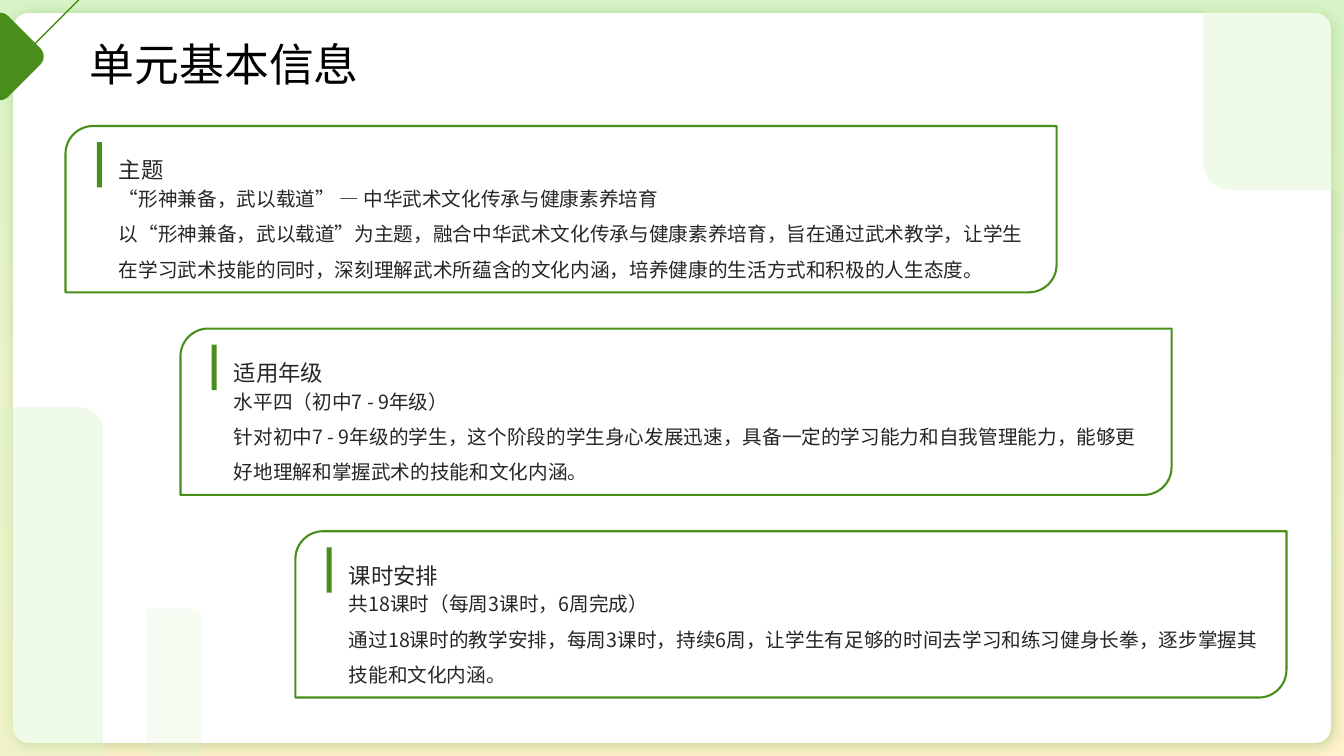
from lxml import etree
from pptx import Presentation
from pptx.dml.color import RGBColor
from pptx.enum.shapes import MSO_SHAPE as SHAPE
from pptx.enum.text import MSO_ANCHOR as ANCHOR, MSO_AUTO_SIZE as AUTO, PP_ALIGN as ALIGN
from pptx.oxml.ns import qn
from pptx.util import Inches, Pt

COLORS = {"green": "498E1B", "mint": "D8F4C6", "cream": "FFF2CC",
          "white": "FFFFFF", "text": "262626", "title": "000000"}
FONT = "Noto Sans CJK SC"
SLIDE_W, SLIDE_H = 13.33, 7.5

TITLE = "单元基本信息"
SECTIONS = [
    ("主题",
     "“形神兼备，武以载道” — 中华武术文化传承与健康素养培育\n"
     "以“形神兼备，武以载道”为主题，融合中华武术文化传承与健康素养培育，旨在通过武术教学，"
     "让学生在学习武术技能的同时，深刻理解武术所蕴含的文化内涵，培养健康的生活方式和积极的人生态度。"),
    ("适用年级",
     "水平四（初中7 - 9年级）\n"
     "针对初中7 - 9年级的学生，这个阶段的学生身心发展迅速，具备一定的学习能力和自我管理能力，"
     "能够更好地理解和掌握武术的技能和文化内涵。"),
    ("课时安排",
     "共18课时（每周3课时，6周完成）\n"
     "通过18课时的教学安排，每周3课时，持续6周，让学生有足够的时间去学习和练习健身长拳，"
     "逐步掌握其技能和文化内涵。"),
]


def rgb(name):
    return RGBColor.from_string(COLORS[name])


def inches(*box):
    return [Inches(v) for v in box]


def add_block(slide, kind, box, fill, line=None, rotation=0, opacity=None):
    sp = slide.shapes.add_shape(kind, *inches(*box))
    sp.shadow.inherit = False
    sp.rotation = rotation
    sp.fill.solid()
    sp.fill.fore_color.rgb = rgb(fill)
    if opacity is not None:
        color = sp.fill._xPr.find(f"{qn('a:solidFill')}/{qn('a:srgbClr')}")
        etree.SubElement(color, qn("a:alpha"), val=str(opacity * 1000))
    if line:
        sp.line.color.rgb = rgb(line)
        sp.line.width = Pt(1.5)
    else:
        sp.line.fill.background()
    return sp


def write_text(sp, text, size, color, spacing, anchor):
    tf = sp.text_frame
    tf.text = text
    tf.word_wrap = True
    tf.auto_size = AUTO.NONE
    tf.vertical_anchor = anchor
    tf.margin_left = tf.margin_right = tf.margin_top = tf.margin_bottom = 0
    for p in tf.paragraphs:
        p.alignment = ALIGN.LEFT
        p.line_spacing = spacing
        for r in p.runs:
            r.font.size = Pt(size)
            r.font.name = FONT
            r.font.color.rgb = rgb(color)
            etree.SubElement(r.font._element, qn("a:ea"), typeface=FONT)


def add_background(slide, w, h):
    # Gradient from cream at the foot to mint at the top
    back = add_block(slide, SHAPE.RECTANGLE, (0, 0, w, h), "cream")
    back.fill.gradient()
    back.fill.gradient_angle = 90
    for stop, name, position in zip(back.fill.gradient_stops, ("cream", "mint"), (0, 1)):
        stop.color.rgb = rgb(name)
        stop.position = position

    # White panel with a soft green shadow
    margin = 0.13
    panel = add_block(slide, SHAPE.ROUNDED_RECTANGLE,
                      (margin, margin, w - 2 * margin, h - 2 * margin), "white")
    panel.adjustments[0] = 0.021
    effects = panel._element.spPr.find(qn("a:effectLst"))
    shadow = etree.SubElement(effects, qn("a:outerShdw"), blurRad=str(Pt(10)), dist=str(Pt(3)),
                              dir=str(45 * 60000), algn="tl", rotWithShape="0")
    color = etree.SubElement(shadow, qn("a:srgbClr"), val=COLORS["green"])
    etree.SubElement(color, qn("a:alpha"), val="30000")


def add_strip(slide, box, opacity):
    add_block(slide, SHAPE.ROUND_2_DIAG_RECTANGLE, box, "mint", rotation=270, opacity=opacity)


def add_section(slide, x, y, w, h, heading, body):
    add_block(slide, SHAPE.ROUND_2_DIAG_RECTANGLE, (x, y, w, h), "white", line="green")
    text_x, text_w = x + 0.53, w - 0.76
    # Three body lines end clear of the lower border
    sp = slide.shapes.add_textbox(*inches(text_x, y + 0.49, text_w, 1.1))
    write_text(sp, body, 14, "text", 1.5, ANCHOR.TOP)
    add_block(slide, SHAPE.RECTANGLE, (x + 0.31, y + 0.16, 0.05, 0.45), "green")
    sp = slide.shapes.add_textbox(*inches(text_x, y + 0.16, text_w, 0.41))
    write_text(sp, heading, 16, "text", 1.3, ANCHOR.BOTTOM)


def add_corner(slide, x, y):
    # Thin outline behind the diamond, centred on x, y
    offsets = [(0.27, -0.05), (0.83, -0.61), (-0.71, -0.61), (-0.14, -0.05), (-0.05, 0.02),
               (0.06, 0.04), (0.17, 0.02)]
    points = [inches(x + dx, y + dy) for dx, dy in offsets]
    builder = slide.shapes.build_freeform(*points[0])
    builder.add_line_segments(points[1:], close=True)
    outline = builder.convert_to_shape()
    outline.shadow.inherit = False
    outline.fill.background()
    outline.line.color.rgb = rgb("green")
    outline.line.width = Pt(1)

    side = 0.68
    add_block(slide, SHAPE.ROUNDED_RECTANGLE, (x - side / 2, y - side / 2, side, side),
              "green", rotation=45)


def add_title(slide, x, y, w, h):
    title = slide.shapes.title
    title.left, title.top, title.width, title.height = inches(x, y, w, h)
    write_text(title, TITLE, 32, "title", 1.5, ANCHOR.MIDDLE)
    slide.shapes._spTree.append(title._element)  # bring to front


def main():
    prs = Presentation()
    prs.slide_width, prs.slide_height = inches(SLIDE_W, SLIDE_H)
    slide = prs.slides.add_slide(prs.slide_layouts[5])

    add_background(slide, SLIDE_W, SLIDE_H)
    add_strip(slide, (0.91, 6.59, 1.64, 0.54), 22)
    # Sections step down to the right
    for i, (heading, body) in enumerate(SECTIONS):
        add_section(slide, 0.65 + 1.14 * i, 1.25 + 2.01 * i, 9.83, 1.65, heading, body)
    add_strip(slide, (10.97, -0.73, 3.58, 1.65), 38)
    add_strip(slide, (-1.46, 5.14, 3.58, 1.38), 38)
    add_corner(slide, 0, 0.56)
    add_title(slide, 0.89, 0.26, 8.51, 0.47)

    prs.save("out.pptx")


if __name__ == "__main__":
    main()
